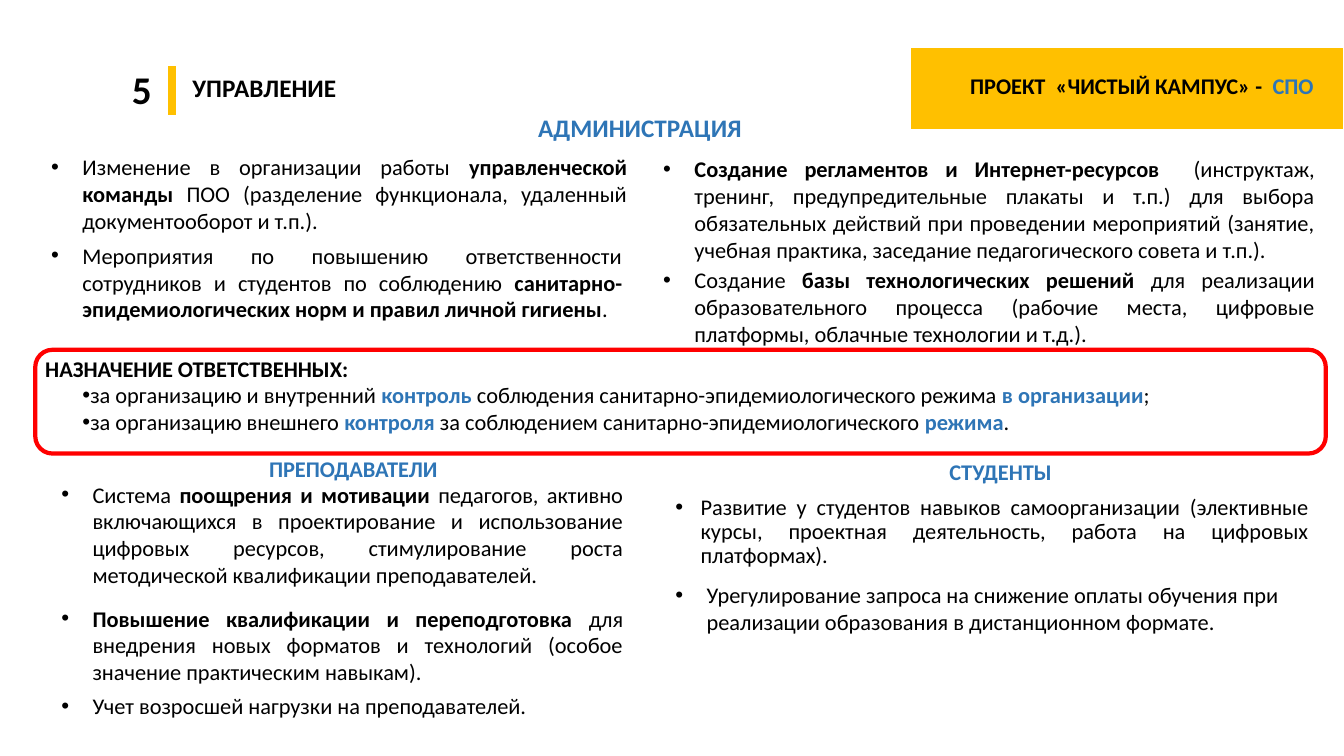
from lxml.etree import SubElement
from pptx import Presentation
from pptx.dml.color import RGBColor
from pptx.enum.shapes import MSO_SHAPE as Preset
from pptx.enum.text import MSO_ANCHOR as Anchor, MSO_AUTO_SIZE as AutoSize, PP_ALIGN as Align
from pptx.oxml.ns import qn
from pptx.util import Inches, Pt

BLACK, BLUE, GOLD, RED, WHITE = "000000", "2E75B6", "FFC000", "FF0000", "FFFFFF"
PLAIN = {"bold": False, "color": BLACK}
STRONG = {"bold": True, "color": BLACK}
ACCENT = {"bold": True, "color": BLUE}
HANGING = (0.31, -0.31)


def rgb(value):
    return RGBColor.from_string(value)


class SlideBuilder:
    font = "Calibri"

    def __init__(self, page):
        self.page = page

    def text(self, place, paragraphs, size=16, align=Align.LEFT, wrap=True,
             grow=True, anchor=Anchor.TOP, spacing=None, after=0, indents=None):
        box = self.page.shapes.add_textbox(*map(Inches, place))
        frame_format = {
            "word_wrap": wrap,
            "auto_size": AutoSize.SHAPE_TO_FIT_TEXT if grow else AutoSize.NONE,
            "vertical_anchor": anchor,
        }
        for name, value in frame_format.items():
            setattr(box.text_frame, name, value)
        para_format = {"alignment": align, "line_spacing": spacing, "space_after": Pt(after)}
        for index, spans in enumerate(paragraphs):
            para = box.text_frame.add_paragraph() if index else box.text_frame.paragraphs[0]
            for name, value in para_format.items():
                setattr(para, name, value)
            if indents and indents[index]:
                self.bullet(para, *indents[index])
            for words, look in spans:
                self.span(para, words, size, **look)

    def span(self, para, words, size, bold, color):
        span = para.add_run()
        span.text = words
        for name, value in {"name": self.font, "size": Pt(size), "bold": bold}.items():
            setattr(span.font, name, value)
        span.font.color.rgb = rgb(color)

    def bullet(self, para, margin, indent):
        properties = para._p.get_or_add_pPr()
        properties.set("marL", str(Inches(margin)))
        properties.set("indent", str(Inches(indent)))
        SubElement(properties, qn("a:buFont"), typeface="Arial")
        SubElement(properties, qn("a:buChar"), char="•")

    def heading(self, place, words, look=ACCENT, **options):
        self.text(place, [[(words, look)]], **options)

    def item(self, place, spans, align=Align.JUSTIFY, after=6, indent=HANGING, **options):
        self.text(place, [spans], align=align, after=after, indents=[indent], **options)

    def shape(self, preset, place, line, width, fill=None):
        shape = self.page.shapes.add_shape(preset, *map(Inches, place))
        shape.shadow.inherit = False
        if fill:
            shape.fill.solid()
            shape.fill.fore_color.rgb = rgb(fill)
        else:
            shape.fill.background()
        shape.line.color.rgb = rgb(line)
        shape.line.width = Pt(width)


def main():
    deck = Presentation()
    deck.slide_width, deck.slide_height = Inches(13.33), Inches(7.5)
    slide = SlideBuilder(deck.slides.add_slide(deck.slide_layouts[6]))

    for place in ((1.66, 0.64, 0.1, 0.51), (9.02, 0.47, 4.31, 0.82)):
        slide.shape(Preset.RECTANGLE, place, WHITE, 1.5, fill=GOLD)
    slide.heading((1.21, 0.6, 0.37, 0.57), "5", STRONG, size=28)
    slide.heading((1.81, 0.67, 5.62, 0.4), "УПРАВЛЕНИЕ", STRONG, size=18)
    slide.text((9.32, 0.67, 4.01, 0.37),
               [[("ПРОЕКТ  «ЧИСТЫЙ КАМПУС» -  ", STRONG), ("СПО", ACCENT)]],
               align=Align.CENTER)

    slide.heading((5.24, 1.07, 2.24, 0.4), "АДМИНИСТРАЦИЯ", size=18, wrap=False)
    slide.item((0.41, 1.47, 5.91, 0.91), [
        ("Изменение в организации работы ", PLAIN),
        ("управленческой команды ", STRONG),
        ("ПОО (разделение функционала, удаленный документооборот и т.п.).", PLAIN),
    ])
    slide.item((0.41, 2.35, 5.86, 0.91), [
        ("Мероприятия по повышению ответственности сотрудников и студентов по соблюдению ", PLAIN),
        ("санитарно- эпидемиологических норм и правил личной гигиены", STRONG),
        (".", PLAIN),
    ], after=0)
    slide.item((6.48, 1.49, 6.66, 1.18), [
        ("Создание регламентов и Интернет-ресурсов  ", STRONG),
        ("(инструктаж, тренинг, предупредительные плакаты и т.п.) для выбора "
         "обязательных действий при проведении мероприятий (занятие, учебная практика, "
         "заседание педагогического совета и т.п.).", PLAIN),
    ])
    slide.item((6.48, 2.59, 6.66, 0.91), [
        ("Создание ", PLAIN),
        ("базы технологических решений ", STRONG),
        ("для реализации образовательного процесса (рабочие места, цифровые платформы, "
         "облачные технологии и т.д.).", PLAIN),
    ])

    slide.text((0.35, 3.47, 12.73, 0.91), [
        [("НАЗНАЧЕНИЕ ОТВЕТСТВЕННЫХ: ", STRONG)],
        [("за организацию и внутренний ", PLAIN),
         ("контроль ", ACCENT),
         ("соблюдения санитарно-эпидемиологического режима ", PLAIN),
         ("в организации", ACCENT),
         (";", PLAIN)],
        [("за организацию внешнего ", PLAIN),
         ("контроля ", ACCENT),
         ("за соблюдением санитарно-эпидемиологического ", PLAIN),
         ("режима", ACCENT),
         (". ", PLAIN)],
    ], align=Align.JUSTIFY, indents=[None, (0.19, 0.18), (0.19, 0.18)])
    slide.shape(Preset.ROUNDED_RECTANGLE, (0.35, 3.47, 12.8, 1.03), RED, 3)

    slide.heading((2.57, 4.47, 1.9, 0.37), "ПРЕПОДАВАТЕЛИ", wrap=False)
    slide.item((0.51, 4.72, 5.77, 1.18), [
        ("Система ", PLAIN),
        ("поощрения и мотивации ", STRONG),
        ("педагогов, активно включающихся в проектирование и использование цифровых "
         "ресурсов, стимулирование роста методической квалификации преподавателей.", PLAIN),
    ])
    slide.item((0.51, 5.95, 5.77, 0.91), [
        ("Повышение квалификации и переподготовка ", STRONG),
        ("для внедрения новых форматов и технологий (особое значение практическим "
         "навыкам).", PLAIN),
    ])
    slide.item((0.51, 6.82, 6.34, 0.37), [("Учет возросшей нагрузки на преподавателей.", PLAIN)])

    slide.heading((8.61, 4.51, 2.63, 0.37), "СТУДЕНТЫ", align=Align.CENTER,
                  grow=False, anchor=Anchor.MIDDLE, spacing=0.9)
    slide.item((6.6, 4.87, 6.48, 0.47), [
        ("Развитие у студентов навыков самоорганизации (элективные курсы, проектная "
         "деятельность, работа на цифровых платформах).", PLAIN),
    ], indent=(0.25, -0.25), grow=False, spacing=0.9)
    slide.item((6.6, 5.72, 6.55, 0.64), [
        ("Урегулирование запроса на снижение оплаты обучения при реализации образования "
         "в дистанционном формате.", PLAIN),
    ], align=Align.LEFT)

    deck.save("out.pptx")


if __name__ == "__main__":
    main()
